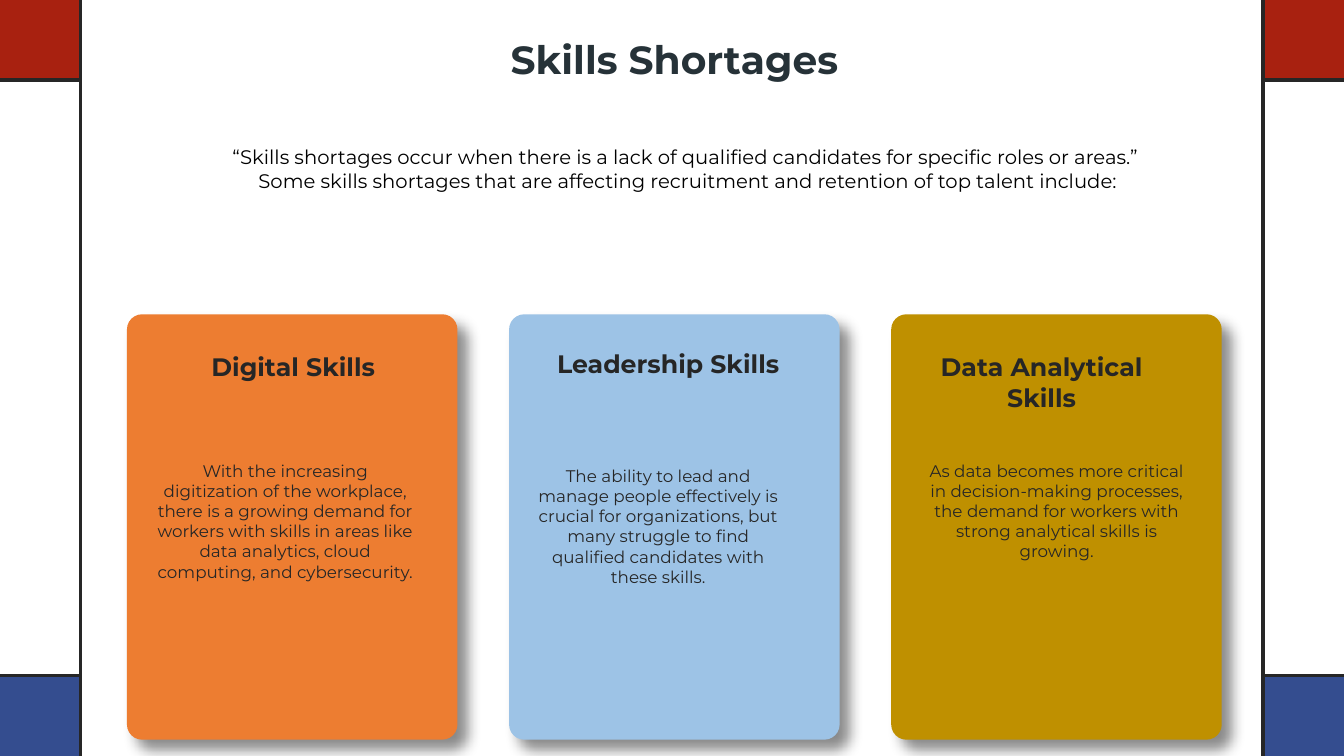
from pptx import Presentation
from pptx.dml.color import RGBColor
from pptx.enum.shapes import MSO_CONNECTOR, MSO_SHAPE
from pptx.enum.text import MSO_ANCHOR, MSO_AUTO_SIZE, PP_ALIGN
from pptx.oxml import parse_xml
from pptx.oxml.ns import nsdecls
from pptx.util import Cm, Pt
from lxml import etree

STRAIGHT = MSO_CONNECTOR.STRAIGHT
RECTANGLE = MSO_SHAPE.RECTANGLE
ROUNDED = MSO_SHAPE.ROUNDED_RECTANGLE
TOP = MSO_ANCHOR.TOP
NO_FIT = MSO_AUTO_SIZE.NONE
CENTER = PP_ALIGN.CENTER

RED = RGBColor(0xA8, 0x21, 0x10)
NAVY = RGBColor(0x34, 0x4D, 0x8F)
CHARCOAL = RGBColor(0x26, 0x26, 0x26)
SLATE = RGBColor(0x26, 0x32, 0x38)
BLACK = RGBColor(0, 0, 0)
ORANGE = RGBColor(0xED, 0x7D, 0x31)
SKY = RGBColor(0x9D, 0xC3, 0xE6)
GOLD = RGBColor(0xBF, 0x90, 0x00)

FONT = "Montserrat"
SLIDE_WIDTH, SLIDE_HEIGHT = 33.87, 19.05
CORNER = 2.03
CARD_LEFT, CARD_TOP, CARD_PITCH = 3.2, 7.92, 9.63
CARD_WIDTH, CARD_HEIGHT = 8.33, 10.72
CARD_TEXT_WIDTH = 6.96

INTRO = [
    "“Skills shortages occur when there is a lack of qualified candidates for specific roles or areas.” ",
    "Some skills shortages that are affecting recruitment and retention of top talent include:",
]
# Colour, heading, description, then (left, top) of each text within the card
CARDS = [
    (ORANGE, "Digital Skills",
     "With the increasing digitization of the workplace, there is a growing demand for workers "
     "with skills in areas like data analytics, cloud computing, and cybersecurity.",
     (0.71, 0.82), (0.51, 3.56)),
    (SKY, "Leadership Skills",
     "The ability to lead and manage people effectively is crucial for organizations, "
     "but many struggle to find qualified candidates with these skills.",
     (0.53, 0.74), (0.28, 3.69)),
    (GOLD, "Data Analytical Skills",
     "As data becomes more critical in decision-making processes, "
     "the demand for workers with strong analytical skills is growing.",
     (0.31, 0.82), (0.69, 3.56)),
]

TITLE_FORMAT = {"name": FONT, "size": Pt(28), "bold": True}
INTRO_FORMAT = {"name": FONT, "size": Pt(14), "bold": False}
HEADING_FORMAT = {"name": FONT, "size": Pt(18), "bold": True}
DESCRIPTION_FORMAT = {"name": FONT, "size": Pt(12), "bold": False}


def add_block(slide, kind, left, top, width, height, color):
    block = slide.shapes.add_shape(kind, Cm(left), Cm(top), Cm(width), Cm(height))
    block.fill.solid()
    block.fill.fore_color.rgb = color
    block.line.fill.background()
    block.shadow.inherit = False
    return block


def add_rule(slide, start_x, start_y, end_x, end_y):
    rule = slide.shapes.add_connector(STRAIGHT, Cm(start_x), Cm(start_y), Cm(end_x), Cm(end_y))
    rule.line.color.rgb = CHARCOAL
    rule.line.width = Pt(2.75)
    etree.SubElement(rule._element.spPr, f"{{{rule._element.nsmap['a']}}}effectLst")


def add_side_band(slide, left, inner_x):
    """Draw one edge of the slide: two corner blocks and their dividing rules."""
    lower_top = SLIDE_HEIGHT - CORNER
    for top, rule_y, color in ((lower_top, lower_top, NAVY), (0, 2.01, RED)):
        add_block(slide, RECTANGLE, left, top, CORNER, CORNER, color)
        add_rule(slide, left, rule_y, left + CORNER, rule_y)
    add_rule(slide, inner_x, 0, inner_x, SLIDE_HEIGHT)


def cast_shadow(shape):
    shape._element.spPr.find(f"{{{shape._element.nsmap['a']}}}effectLst").append(parse_xml(
        f'<a:outerShdw {nsdecls("a")} blurRad="{Pt(10)}" dist="{Pt(10)}" dir="2700000" '
        'algn="tl" rotWithShape="0"><a:srgbClr val="000000"><a:alpha val="45000"/>'
        '</a:srgbClr></a:outerShdw>'))


def write_text(box, lines, font_format, color):
    frame = box.text_frame
    frame.text = "\n".join(lines)
    frame.word_wrap = True
    frame.auto_size = NO_FIT
    frame.vertical_anchor = TOP
    for para in frame.paragraphs:
        para.alignment = CENTER
        for span in para.runs:
            for attribute, value in font_format.items():
                setattr(span.font, attribute, value)
            span.font.color.rgb = color


def add_text(slide, left, top, width, height, lines, font_format, color):
    box = slide.shapes.add_textbox(Cm(left), Cm(top), Cm(width), Cm(height))
    write_text(box, lines, font_format, color)


def set_title(slide, text):
    title = slide.shapes.title
    placement = {"left": Cm(10.57), "top": Cm(0.64), "width": Cm(12.85), "height": Cm(1.32)}
    for attribute, value in placement.items():
        setattr(title, attribute, value)
    write_text(title, [text], TITLE_FORMAT, SLATE)
    frame = title.text_frame
    for side in ("left", "top", "right", "bottom"):
        setattr(frame, f"margin_{side}", 0)
    frame.paragraphs[0].line_spacing = 1.2


def add_card(slide, left, color, heading, description, heading_offset, description_offset):
    card = add_block(slide, ROUNDED, left, CARD_TOP, CARD_WIDTH, CARD_HEIGHT, color)
    card.adjustments[0] = 0.046
    cast_shadow(card)
    for text, (shift_x, shift_y), height, font_format in (
            (heading, heading_offset, 1.02, HEADING_FORMAT),
            (description, description_offset, 3.33, DESCRIPTION_FORMAT)):
        add_text(slide, left + shift_x, CARD_TOP + shift_y, CARD_TEXT_WIDTH, height,
                 [text], font_format, CHARCOAL)


def main():
    deck = Presentation()
    deck.slide_width, deck.slide_height = Cm(SLIDE_WIDTH), Cm(SLIDE_HEIGHT)
    slide = deck.slides.add_slide(deck.slide_layouts[5])
    right_band = SLIDE_WIDTH - CORNER
    add_side_band(slide, right_band, right_band)
    add_side_band(slide, 0, CORNER)
    set_title(slide, "Skills Shortages")
    add_text(slide, 4.62, 3.53, 25.45, 3.84, INTRO, INTRO_FORMAT, BLACK)
    for index, card in enumerate(CARDS):
        add_card(slide, CARD_LEFT + index * CARD_PITCH, *card)
    deck.save("out.pptx")


if __name__ == "__main__":
    main()
